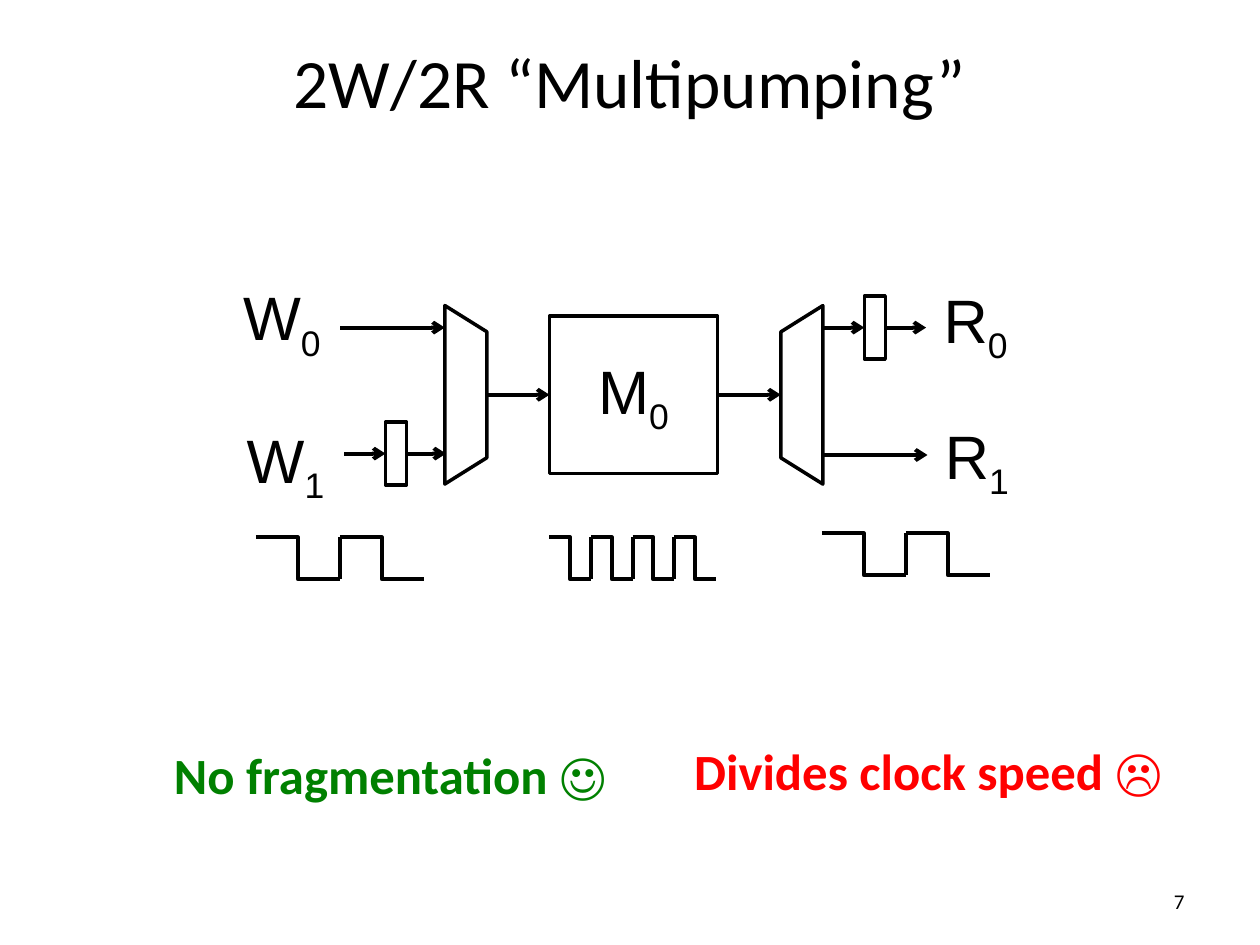
from lxml import etree
from pptx import Presentation
from pptx.dml.color import RGBColor
from pptx.enum.shapes import MSO_CONNECTOR, MSO_SHAPE
from pptx.enum.text import MSO_ANCHOR, PP_ALIGN
from pptx.oxml.ns import qn
from pptx.util import Pt

STRAIGHT, ELBOW = MSO_CONNECTOR.STRAIGHT, MSO_CONNECTOR.ELBOW
RECT, TRAPEZOID = MSO_SHAPE.RECTANGLE, MSO_SHAPE.TRAPEZOID
TOP, MIDDLE = MSO_ANCHOR.TOP, MSO_ANCHOR.MIDDLE
LEFT, CENTER, RIGHT = PP_ALIGN.LEFT, PP_ALIGN.CENTER, PP_ALIGN.RIGHT
BLACK = RGBColor.from_string("000000")

prs = Presentation()
prs.slide_width, prs.slide_height = Pt(720), Pt(540)
s = prs.slides.add_slide(prs.slide_layouts[6])


def write(sp, parts, size, font="Arial", color="000000", align=LEFT, bold=False):
    p = sp.text_frame.paragraphs[0]
    p.alignment = align
    for i, part in enumerate(parts):
        r = p.add_run()
        r.text = part
        r.font.size, r.font.name, r.font.bold = Pt(size), font, bold
        r.font.color.rgb = RGBColor.from_string(color)
        if i:
            r.font._element.set("baseline", "-25000")


def connect(kind, x1, y1, x2, y2, arrow=False):
    c = s.shapes.add_connector(kind, Pt(x1), Pt(y1), Pt(x2), Pt(y2))
    c.line.color.rgb = BLACK
    c.line.width = Pt(2.25)
    if arrow:
        etree.SubElement(c.line._ln, qn("a:tailEnd"), type="arrow")
    etree.SubElement(c._element.spPr, qn("a:effectLst"))
    return c


for text, x, y, w, h, size, color, align, anchor, bold in [
    ("7", 516.2, 500.4, 167.8, 28.8, 12, "000000", RIGHT, MIDDLE, False),
    ("2W/2R “Multipumping”", 36, 21.6, 648, 49, 39.6, "000000", CENTER, MIDDLE, False),
    ("No fragmentation ☺", 92.9, 421.9, 275.8, 71.3, 29, "008000", LEFT, TOP, True),
    ("Divides clock speed ☹", 390.2, 419.8, 280.8, 44.6, 29, "FF0000", LEFT, TOP, True),
]:
    sp = s.shapes.add_textbox(Pt(x), Pt(y), Pt(w), Pt(h))
    tf = sp.text_frame
    tf.word_wrap = not bold
    tf.vertical_anchor = anchor
    if bold:
        tf.margin_left = tf.margin_right = Pt(6.5)
        tf.margin_top = tf.margin_bottom = Pt(3)
    write(sp, [text], size, "Calibri", color, align, bold)

for letter, index, x, y, w in [
    ("W", "0", 131.8, 156.2, 61.2),
    ("W", "1", 133.9, 237.6, 61.2),
    ("R", "0", 532.1, 157.7, 53.3),
    ("R", "1", 532.8, 235.4, 53.3),
]:
    sp = s.shapes.add_textbox(Pt(x), Pt(y), Pt(w), Pt(49.7))
    sp.text_frame.word_wrap = False
    write(sp, [letter, index], 35)

blocks = []
for shape, x, y, w, h, angle in [
    (RECT, 314, 180.6, 96, 90, 0),
    (RECT, 220.3, 241.2, 12, 36, 0),
    (RECT, 493.9, 169.2, 12, 36, 0),
    (TRAPEZOID, 215.2, 213.6, 102, 24, 90),
    (TRAPEZOID, 407.2, 213.6, 102, 24, 270),
]:
    sp = s.shapes.add_shape(shape, Pt(x), Pt(y), Pt(w), Pt(h))
    sp.shadow.inherit = False
    sp.fill.background()
    sp.line.color.rgb = BLACK
    sp.line.width = Pt(2)
    sp.rotation = angle
    if shape == TRAPEZOID:
        sp.adjustments[0] = 0.625
    blocks.append(sp)
memory, write_reg, read_reg = blocks[:3]
memory.text_frame.vertical_anchor = MIDDLE
write(memory, ["M", "0"], 35, align=CENTER)

for x1, x2, y, source, target in [
    (194.4, 254.2, 187.2, None, None),
    (196.6, 220.3, 259.2, None, write_reg),
    (232.3, 254.9, 259.2, write_reg, None),
    (278.2, 314, 225.6, None, memory),
    (410, 446.2, 225.6, memory, None),
    (470.2, 493.9, 187.2, None, read_reg),
    (505.9, 529.2, 187.2, read_reg, None),
    (470.2, 530, 260, None, None),
]:
    c = connect(STRAIGHT, x1, y, x2, y, True)
    if source:
        c.begin_connect(source, 3)
    if target:
        c.end_connect(target, 1)

PULSE_H = 24
for x, y, period, count in [(146.2, 307, 48, 2), (314, 307, 23.75, 4), (469.6, 304.7, 48, 2)]:
    for i in range(count):
        left = x + i * period
        connect(ELBOW, left, y, left + period, y + PULSE_H)
        if i:
            connect(STRAIGHT, left, y, left, y + PULSE_H)

prs.save("out.pptx")
